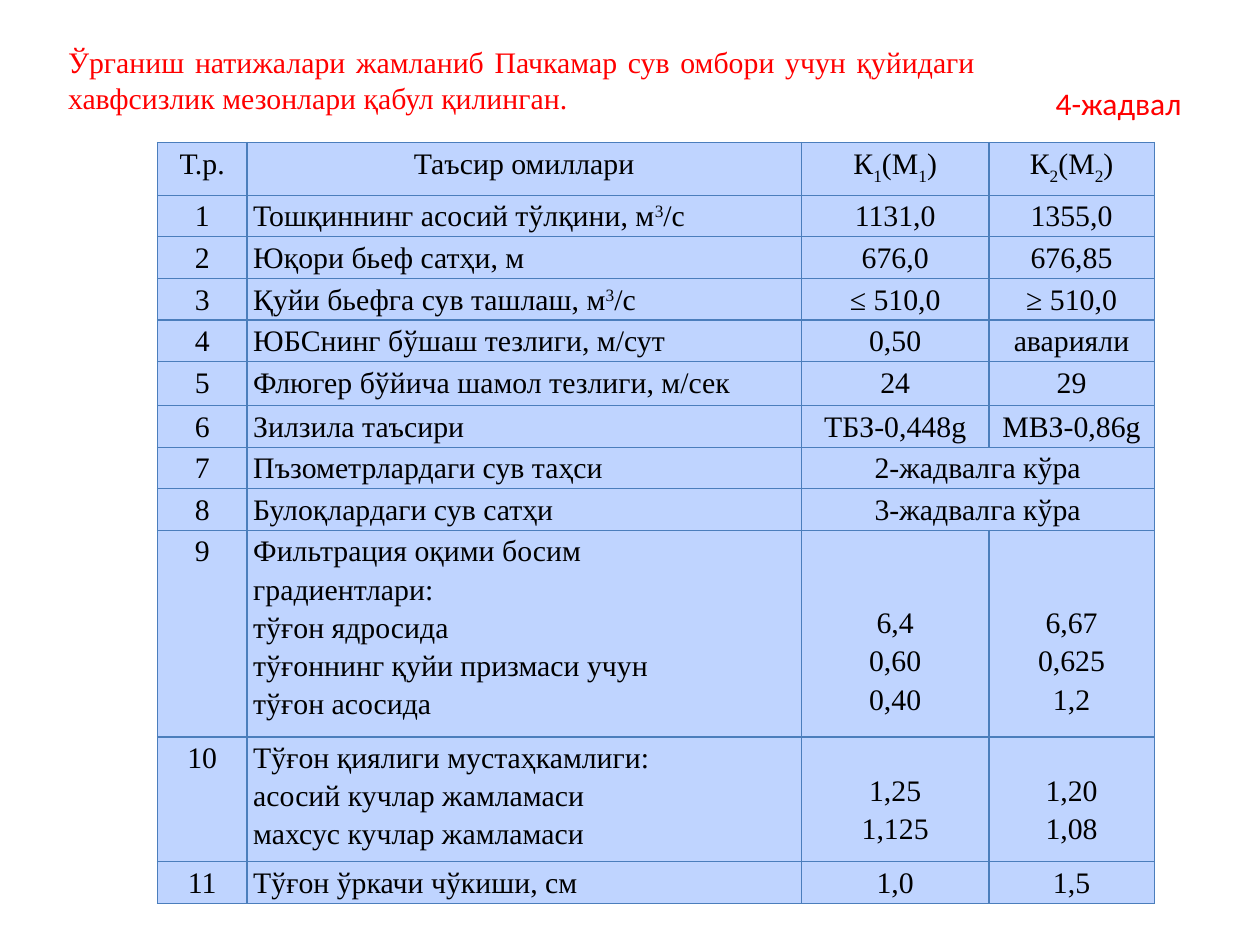
import pptx
import pptx.dml.color
import pptx.enum.text
import pptx.oxml
import pptx.oxml.ns
import pptx.util
from pptx.util import Inches

COLORS = {"heading": "FF0000", "text": "000000", "cell": "BFD4FF", "border": "4B7EBC"}
BASELINES = {"_": "-25000", "^": "30000"}
ALIGN = pptx.enum.text.PP_ALIGN
COLUMN_WIDTHS = [0.71, 4.4, 1.49, 1.31]
ROW_HEIGHTS = [0.42] + [0.33] * 4 + [0.35] + [0.33] * 3 + [1.64, 0.99, 0.33]
VALUE_OFFSETS = {9: 0.57, 10: 0.26}
HEADERS = ["Т.р.", "Таъсир омиллари", "К|_1|(М|_1|)", "К|_2|(М|_2|)"]
CRITERIA = [
    ["Тошқиннинг асосий тўлқини, м|^3|/с", "1131,0", "1355,0"],
    ["Юқори бьеф сатҳи, м", "676,0", "676,85"],
    ["Қуйи бьефга сув ташлаш, м|^3|/с", "≤ 510,0", "≥ 510,0"],
    ["ЮБСнинг бўшаш тезлиги, м/сут", "0,50", "аварияли"],
    ["Флюгер бўйича шамол тезлиги, м/сек", "24", "29"],
    ["Зилзила таъсири", "ТБЗ-0,448g", "МВЗ-0,86g"],
    ["Пъзометрлардаги сув таҳси", "2-жадвалга кўра"],
    ["Булоқлардаги сув сатҳи", "3-жадвалга кўра"],
    ["Фильтрация оқими босим\nградиентлари:\nтўғон ядросида\n"
     "тўғоннинг қуйи призмаси учун\nтўғон асосида", "6,4\n0,60\n0,40", "6,67\n0,625\n1,2"],
    ["Тўғон қиялиги мустаҳкамлиги:\nасосий кучлар жамламаси\nмахсус кучлар жамламаси",
     "1,25\n1,125", "1,20\n1,08"],
    ["Тўғон ўркачи чўкиши, см", "1,0", "1,5"],
]


def rgb(name):
    """Return the named colour."""
    return pptx.dml.color.RGBColor.from_string(COLORS[name])


def style_paragraph(paragraph, font_name, size, color, alignment):
    """Set the font and alignment of a paragraph."""
    paragraph.alignment = alignment
    paragraph.font.name = font_name
    paragraph.font.size = pptx.util.Pt(size)
    paragraph.font.color.rgb = rgb(color)


def add_heading(slide, box, text, font_name, size, alignment, wrap):
    """Place a red heading in the given box."""
    shape = slide.shapes.add_textbox(*map(Inches, box))
    frame = shape.text_frame
    frame.word_wrap = wrap
    frame.auto_size = pptx.enum.text.MSO_AUTO_SIZE.SHAPE_TO_FIT_TEXT
    frame.text = text
    style_paragraph(frame.paragraphs[0], font_name, size, "heading", alignment)
    return frame


def add_borders(cell):
    """Draw a thin line on each side of a cell."""
    properties = cell._tc.get_or_add_tcPr()
    for side in "LRTB":
        properties.append(pptx.oxml.parse_xml(
            f'<a:ln{side} {pptx.oxml.ns.nsdecls("a")} w="9525"><a:solidFill>'
            f'<a:srgbClr val="{COLORS["border"]}"/></a:solidFill></a:ln{side}>'))


def write_cell(cell, text, alignment):
    """Write lines whose pieces may be marked as subscript or superscript."""
    frame = cell.text_frame
    for index, line in enumerate(text.split("\n")):
        paragraph = frame.add_paragraph() if index else frame.paragraphs[0]
        style_paragraph(paragraph, "Times New Roman", 17, "text", alignment)
        paragraph.line_spacing = 1.15
        for piece in line.split("|"):
            run = paragraph.add_run()
            run.text = piece.lstrip("_^")
            if piece[0] in BASELINES:
                run._r.get_or_add_rPr().set("baseline", BASELINES[piece[0]])


def add_criteria_table(slide, box):
    """Place the table of safety criteria in the given box."""
    rows = [HEADERS] + [[str(number), *row] for number, row in enumerate(CRITERIA, 1)]
    table = slide.shapes.add_table(len(rows), len(HEADERS), *map(Inches, box)).table
    for column, width in zip(table.columns, COLUMN_WIDTHS):
        column.width = Inches(width)
    for row, height in zip(table.rows, ROW_HEIGHTS):
        row.height = Inches(height)
    for cell in table.iter_cells():
        cell.margin_left = cell.margin_right = Inches(0.05)
        cell.margin_top = cell.margin_bottom = 0
        add_borders(cell)
        cell.fill.solid()
        cell.fill.fore_color.rgb = rgb("cell")
    for row_index, row in enumerate(rows):
        if len(row) < len(HEADERS):
            table.cell(row_index, 2).merge(table.cell(row_index, 3))
        for column_index, text in enumerate(row):
            cell = table.cell(row_index, column_index)
            is_factor = row_index > 0 and column_index == 1
            write_cell(cell, text, ALIGN.LEFT if is_factor else ALIGN.CENTER)
            if column_index > 1:
                cell.margin_top = Inches(VALUE_OFFSETS.get(row_index, 0))


def main():
    """Build and save the presentation."""
    presentation = pptx.Presentation()
    presentation.slide_width, presentation.slide_height = Inches(10), Inches(7.5)
    slide = presentation.slides.add_slide(presentation.slide_layouts[6])
    title = add_heading(
        slide, (0.47, 0.31, 7.34, 0.65),
        "Ўрганиш натижалари жамланиб Пачкамар сув омбори учун қуйидаги "
        "хавфсизлик мезонлари қабул қилинган.",
        "Times New Roman", 17, ALIGN.JUSTIFY, True)
    title.margin_left = title.margin_right = Inches(0.07)
    title.margin_top = title.margin_bottom = Inches(0.04)
    add_criteria_table(slide, (1.25, 1.13, 7.91, 6.03))
    add_heading(slide, (8.28, 0.62, 1.21, 0.4), "4-жадвал", "Calibri", 18, ALIGN.LEFT, False)
    presentation.save("out.pptx")


if __name__ == "__main__":
    main()
